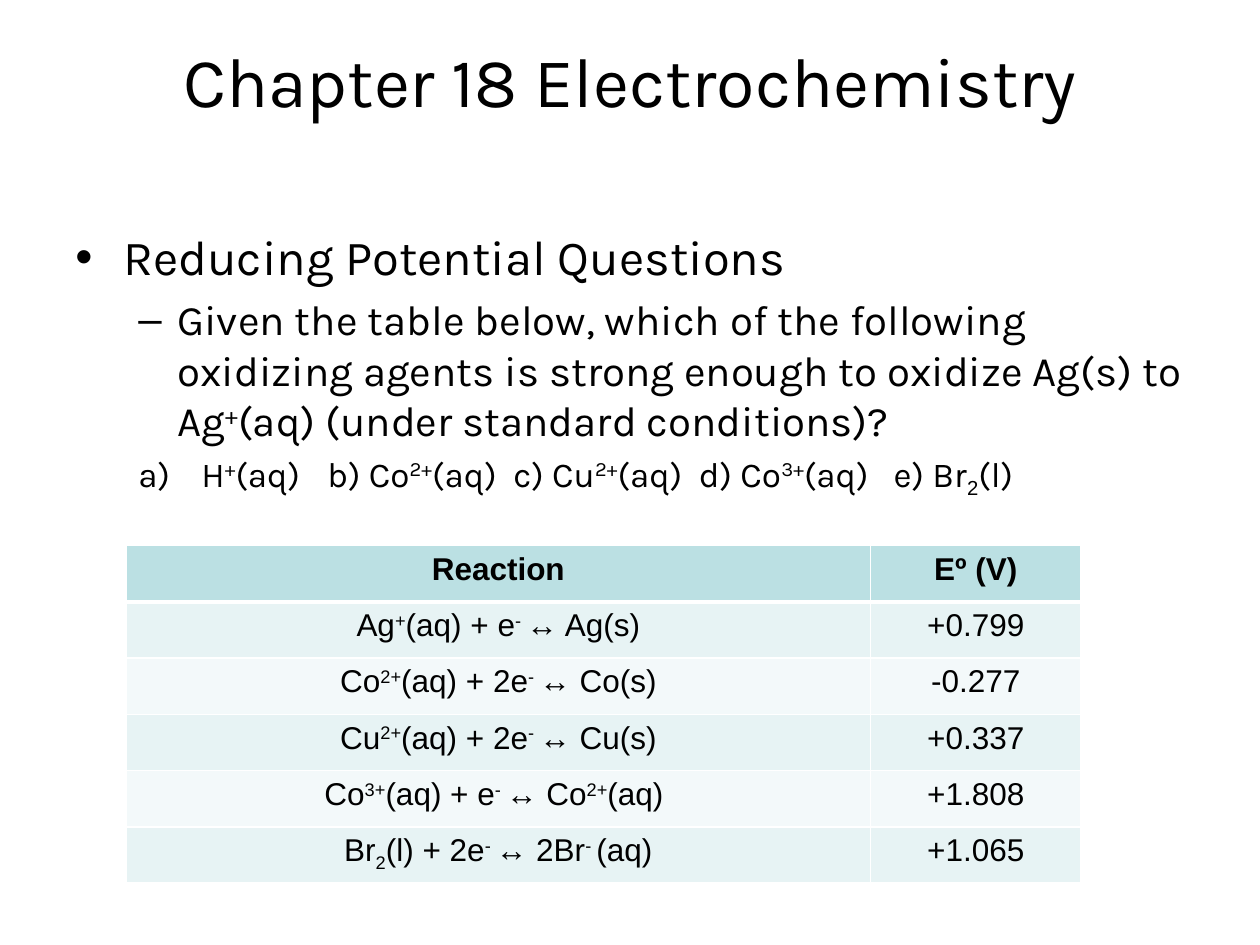
from lxml import etree
from pptx import Presentation
from pptx import util as u
from pptx.dml.color import RGBColor
from pptx.enum import text
from pptx.oxml.ns import qn

BLACK, WHITE = "000000", "FFFFFF"
HEADER_FILL, BAND_FILLS = "BBE0E3", ("E7F3F4", "F3F9FA")
BASELINES = {"^": "30000", "_": "-25000"}

QUESTION_LINES = [  # text, size, level, left margin, indent, bullet tag, bullet attributes
    ("Reducing Potential Questions", 28, 0, 0.38, -0.38, "a:buChar", {"char": "•"}),
    ("Given the table below, which of the following oxidizing agents is strong enough "
     "to oxidize Ag(s) to Ag|^+|(aq) (under standard conditions)?",
     24, 1, 0.81, -0.31, "a:buChar", {"char": "–"}),
    ("H|^+|(aq) \tb) Co|^2+|(aq)  c) Cu|^2+|(aq)  d) Co|^3+|(aq)   e) Br|_2|(l)",
     20, 1, 1, -0.5, "a:buAutoNum", {"type": "alphaLcParenR"}),
]
POTENTIALS = [
    ("Reaction", "Eº (V)"),
    ("Ag|^+|(aq) + e|^- |↔| Ag(s)", "+0.799"),
    ("Co|^2+|(aq) + 2e|^- |↔| Co(s)", "-0.277"),
    ("Cu|^2+|(aq) + 2e|^- |↔| Cu(s)", "+0.337"),
    ("Co|^3+|(aq) + e|^- |↔| Co|^2+|(aq) ", "+1.808"),
    ("Br|_2|(l) + 2e|^- |↔| 2Br|^- |(aq)", "+1.065"),
]


def rgb(color):
    return RGBColor.from_string(color)


def write(paragraph, markup, size=18, font="Arial", color=BLACK, bold=False, align=None):
    """Write runs parted by |; a run that starts with ^ is raised, with _ lowered."""
    paragraph.alignment = align
    for piece in markup.split("|"):
        baseline = BASELINES.get(piece[0])
        run = paragraph.add_run()
        run.text = piece[1:] if baseline else piece
        run.font.size, run.font.bold = u.Pt(size), bold
        run.font.color.rgb = rgb(color)
        run.font.name = {"↔": "Times New Roman", "_": "Arial"}.get(piece[0], font)
        if baseline:
            run.font._element.set("baseline", baseline)


def add_title(slide, title):
    heading = slide.shapes.title
    heading.left, heading.top = u.Inches(0.5), u.Inches(0.3)
    heading.width, heading.height = u.Inches(9), u.Inches(1.25)
    frame = heading.text_frame
    frame.vertical_anchor = text.MSO_ANCHOR.TOP
    frame.margin_top = 0
    write(frame.paragraphs[0], title, size=40, font="Karla", align=text.PP_ALIGN.CENTER)


def set_bullet(paragraph, margin, indent, tag, attributes):
    properties = paragraph._p.get_or_add_pPr()
    properties.set("marL", str(u.Inches(margin)))
    properties.set("indent", str(u.Inches(indent)))
    if tag == "a:buChar":
        etree.SubElement(properties, qn("a:buFont"), typeface="Arial")
    etree.SubElement(properties, qn(tag), attributes)


def add_question(slide):
    box = slide.shapes.add_textbox(u.Inches(0.5), u.Inches(1.75), u.Inches(9), u.Inches(4.95))
    frame = box.text_frame
    frame.word_wrap = True
    for i, (line, size, level, margin, indent, tag, attributes) in enumerate(QUESTION_LINES):
        paragraph = frame.add_paragraph() if i else frame.paragraphs[0]
        paragraph.level = level
        paragraph.space_before = u.Pt(size * 0.2)
        set_bullet(paragraph, margin, indent, tag, attributes)
        write(paragraph, line, size=size, font="Karla")


def set_borders(cell, top, bottom):
    properties = cell._tc.get_or_add_tcPr()
    sides = (("a:lnL", 1), ("a:lnR", 1), ("a:lnT", top), ("a:lnB", bottom))
    for position, (side, width) in enumerate(sides):
        line = etree.Element(qn(side), w=str(u.Pt(width)))
        fill = etree.SubElement(line, qn("a:solidFill"))
        etree.SubElement(fill, qn("a:srgbClr"), val=WHITE)
        properties.insert(position, line)


def add_potentials(slide):
    table = slide.shapes.add_table(len(POTENTIALS), 2, u.Inches(1), u.Inches(4.33),
                                   u.Inches(7.58), u.Inches(2.68)).table
    for column, width in zip(table.columns, (5.91, 1.67)):
        column.width = u.Inches(width)
    for r, row in enumerate(POTENTIALS):
        for c, entry in enumerate(row):
            cell = table.cell(r, c)
            cell.fill.solid()
            cell.fill.fore_color.rgb = rgb(BAND_FILLS[(r - 1) % 2] if r else HEADER_FILL)
            set_borders(cell, top=3 if r == 1 else 1, bottom=1 if r else 3)
            write(cell.text_frame.paragraphs[0], entry, bold=r == 0,
                  align=text.PP_ALIGN.CENTER)


def main():
    deck = Presentation()
    deck.slide_width, deck.slide_height = u.Inches(10), u.Inches(7.5)
    slide = deck.slides.add_slide(deck.slide_layouts[5])  # title only
    add_title(slide, "Chapter 18 Electrochemistry")
    add_question(slide)
    add_potentials(slide)
    deck.save("out.pptx")


if __name__ == "__main__":
    main()
